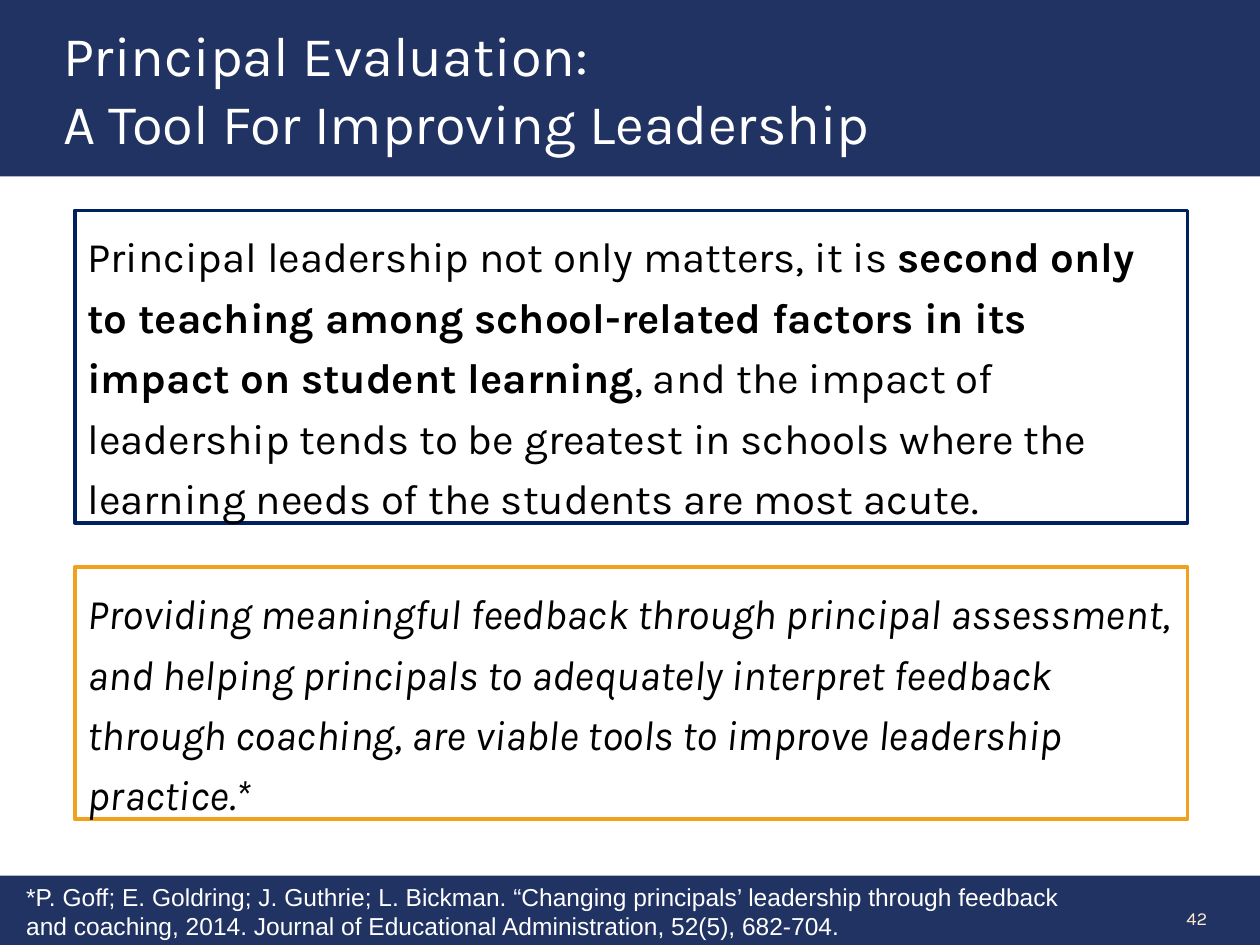
from dataclasses import dataclass

from pptx import Presentation
from pptx import util as u
from pptx.dml import color
from pptx.enum import shapes, text


@dataclass(frozen=True)
class Theme:
    navy: str = "213363"
    border_blue: str = "002060"
    border_orange: str = "F2A11F"
    white: str = "FFFFFF"
    black: str = "000000"
    cream: str = "FEEBD0"
    font: str = "Karla"
    citation_font: str = "Arial"
    title_size: float = 32
    body_size: float = 24
    citation_size: float = 14
    number_size: float = 10.5


class SlideBuilder:
    def __init__(self, slide, theme):
        self.slide = slide
        self.theme = theme

    def rectangle(self, bounds, fill=None, line=None):
        shape = self.slide.shapes.add_shape(
            shapes.MSO_SHAPE.RECTANGLE, *map(u.Pt, bounds))
        shape.shadow.inherit = False
        if fill:
            shape.fill.solid()
            shape.fill.fore_color.rgb = color.RGBColor.from_string(fill)
        else:
            shape.fill.background()
        if line:
            shape.line.color.rgb = color.RGBColor.from_string(line)
            shape.line.width = u.Pt(2)
        else:
            shape.line.fill.background()
        return shape

    def add_text(self, shape, paragraphs, size, ink, font=None, insets=(7.2, 3.6),
                 anchor=text.MSO_ANCHOR.TOP, align=text.PP_ALIGN.LEFT, spacing=1.0):
        frame = shape.text_frame
        frame.word_wrap = True
        frame.vertical_anchor = anchor
        frame.margin_left, frame.margin_top = map(u.Pt, insets)
        frame.margin_right, frame.margin_bottom = u.Pt(7.2), u.Pt(3.6)
        for index, runs in enumerate(paragraphs):
            paragraph = frame.add_paragraph() if index else frame.paragraphs[0]
            paragraph.alignment = align
            paragraph.line_spacing = spacing
            for words, bold, italic in runs:
                run = paragraph.add_run()
                run.text = words
                run.font.name = font or self.theme.font
                run.font.size = u.Pt(size)
                run.font.bold = bold
                run.font.italic = italic
                run.font.color.rgb = color.RGBColor.from_string(ink)

    def label(self, bounds, paragraphs, size, ink, **style):
        box = self.slide.shapes.add_textbox(*map(u.Pt, bounds))
        self.add_text(box, paragraphs, size, ink, **style)

    def title(self, bounds, lines):
        band = self.rectangle(bounds, fill=self.theme.navy)
        self.add_text(band, [[(line, False, False)] for line in lines],
                      self.theme.title_size, self.theme.white,
                      insets=(36, 3.6), anchor=text.MSO_ANCHOR.MIDDLE)

    def statement(self, bounds, border, runs):
        box = self.rectangle(bounds, line=border)
        self.add_text(box, [runs], self.theme.body_size, self.theme.black,
                      insets=(7.2, 6), spacing=1.2)


def main():
    theme = Theme()
    presentation = Presentation()
    presentation.slide_width, presentation.slide_height = u.Pt(720), u.Pt(540)
    slide = presentation.slides.add_slide(presentation.slide_layouts[6])
    builder = SlideBuilder(slide, theme)

    builder.rectangle((0, 500.4, 721.4, 42.5), fill=theme.navy)
    builder.label((591.8, 510.5, 105.1, 28.8), [[("42", False, False)]],
                  theme.number_size, theme.cream,
                  anchor=text.MSO_ANCHOR.MIDDLE, align=text.PP_ALIGN.RIGHT)
    builder.title((0, 0, 721.4, 100.8),
                  ["Principal Evaluation:", "A Tool For Improving Leadership"])
    builder.statement((42.8, 120.2, 635.8, 178.6), theme.border_blue, [
        ("Principal leadership not only matters, it is ", False, False),
        ("second only to teaching among school-related factors in its "
         "impact on student learning", True, False),
        (", and the impact of leadership tends to be greatest in schools where "
         "the learning needs of the students are most acute.", False, False),
    ])
    builder.statement((42.8, 324, 635.8, 144), theme.border_orange, [
        ("Providing meaningful feedback through principal assessment, and "
         "helping principals to adequately interpret feedback through coaching, "
         "are viable tools to improve leadership practice.*", False, True),
    ])
    builder.label((7.9, 500.4, 753.8, 41), [
        [("*P. Goff; E. Goldring; J. Guthrie; L. Bickman. “Changing principals’ "
          "leadership through feedback", False, False)],
        [("and coaching, 2014. Journal of Educational Administration, 52(5), "
          "682-704.", False, False)],
    ], theme.citation_size, theme.white, font=theme.citation_font)

    presentation.save("out.pptx")


if __name__ == "__main__":
    main()
